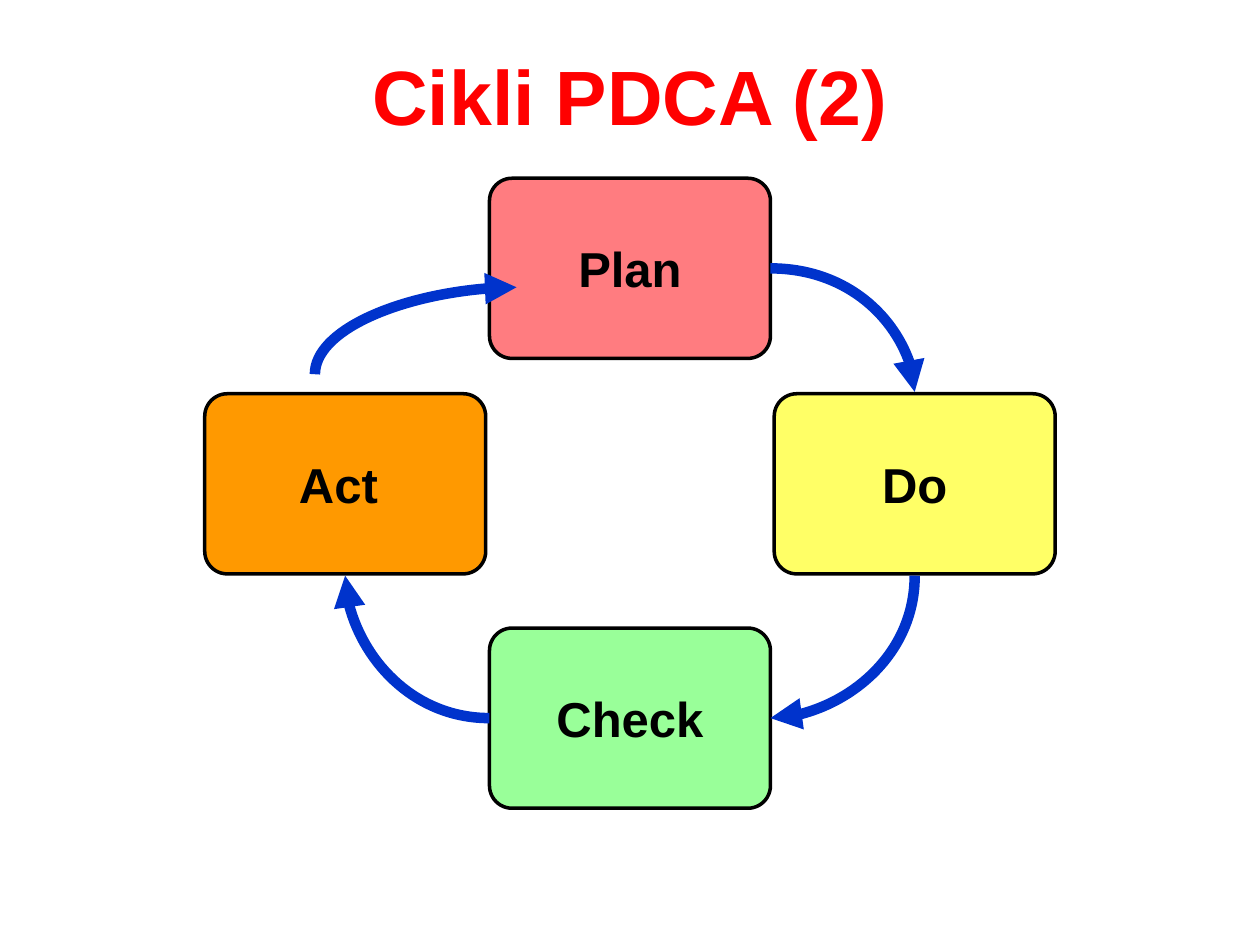
"""Build the PDCA cycle slide: four rounded boxes joined by curved arrows."""
from lxml.etree import SubElement
from pptx import Presentation
from pptx.dml.color import RGBColor as RGB
from pptx.enum.shapes import MSO_CONNECTOR as CONN, MSO_SHAPE as SHAPE
from pptx.enum.text import MSO_ANCHOR as ANCHOR, PP_ALIGN as ALIGN
from pptx.oxml.ns import qn
from pptx.util import Inches, Pt

COLORS = {"title": "FF0000", "text": "000000", "arrow": "0033CC", "Plan": "FF7C80",
          "Do": "FFFF66", "Check": "99FF99", "Act ": "FF9900"}
C = {name: RGB.from_string(value) for name, value in COLORS.items()}

prs = Presentation()
prs.slide_width, prs.slide_height = Inches(10), Inches(7.5)
s = prs.slides.add_slide(prs.slide_layouts[6])


def write(sp, text, size, color, wrap):
    tf = sp.text_frame
    frame = {"word_wrap": wrap, "vertical_anchor": ANCHOR.MIDDLE,
             "margin_left": Inches(0.15), "margin_right": Inches(0.15),
             "margin_top": Inches(0.08), "margin_bottom": Inches(0.08)}
    for key, value in frame.items():
        setattr(tf, key, value)
    p = tf.paragraphs[0]
    p.alignment = ALIGN.CENTER
    r = p.add_run()
    r.text = text
    for key, value in {"name": "Arial", "size": Pt(size), "bold": True}.items():
        setattr(r.font, key, value)
    r.font.color.rgb = C[color]


write(s.shapes.add_textbox(Inches(0.5), Inches(0.3), Inches(9), Inches(0.9)),
      "Cikli PDCA (2)", 44, "title", True)

LEFT, MID, RIGHT = 2.74, 5, 7.26
TOP, CENTER, BOTTOM = 2.13, 3.84, 5.7
W, H = 2.23, 1.43
boxes = {"Plan": (MID, TOP), "Do": (RIGHT, CENTER),
         "Check": (MID, BOTTOM), "Act ": (LEFT, CENTER)}
for name, (x, y) in boxes.items():
    sp = s.shapes.add_shape(SHAPE.ROUNDED_RECTANGLE, Inches(x - W / 2),
                            Inches(y - H / 2), Inches(W), Inches(H))
    sp.shadow.inherit = False
    sp.adjustments[0] = 0.125
    sp.fill.solid()
    sp.fill.fore_color.rgb = C[name]
    sp.line.color.rgb = C["text"]
    sp.line.width = Pt(2)
    write(sp, name, 28, "text", False)

arrows = [
    (MID + W / 2, TOP, RIGHT, 3.11, "tailEnd"),
    (MID + W / 2, BOTTOM, RIGHT, 4.57, "headEnd"),
    (MID - W / 2, BOTTOM, LEFT, 4.57, "tailEnd"),
    (4.1, 2.28, 2.5, 2.97, "headEnd"),
]
for *ends, tip in arrows:
    cx = s.shapes.add_connector(CONN.CURVE, *map(Inches, ends))
    cx.line.color.rgb = C["arrow"]
    cx.line.width = Pt(6)
    sp_pr = cx._element.spPr
    sp_pr.find(qn("a:prstGeom")).set("prst", "curvedConnector2")
    SubElement(sp_pr.find(qn("a:ln")), qn(f"a:{tip}"), type="triangle")
    SubElement(sp_pr, qn("a:effectLst"))

prs.save("out.pptx")
